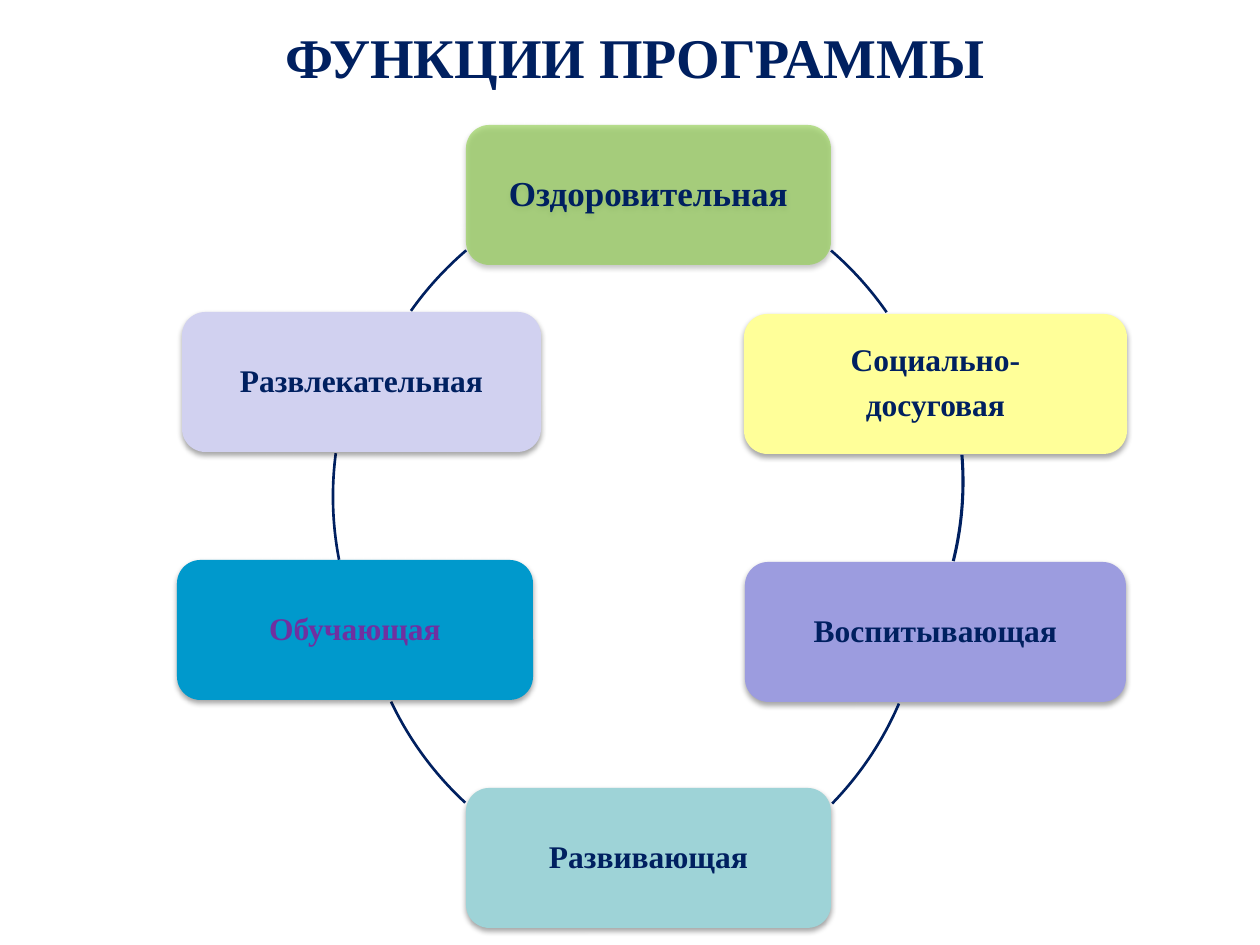
from lxml.etree import SubElement
from pptx import Presentation
from pptx.dml.color import RGBColor
from pptx.enum.shapes import MSO_SHAPE
from pptx.enum.text import MSO_ANCHOR, PP_ALIGN
from pptx.oxml.ns import qn
from pptx.util import Emu, Pt

SCALE = 914400 / 126
NAVY = RGBColor(0x00, 0x20, 0x60)
PURPLE = RGBColor(0x70, 0x30, 0xA0)
GREEN = RGBColor(0x92, 0xD0, 0x50)
YELLOW = RGBColor(0xFF, 0xFF, 0x99)
VIOLET = RGBColor(0x9C, 0x9C, 0xDF)
TEAL = RGBColor(0x9E, 0xD3, 0xD7)
BLUE = RGBColor(0x00, 0x99, 0xCC)
LILAC = RGBColor(0xD1, 0xD1, 0xF0)

TALL = 140
RING = 663
FONT = {"name": "Times New Roman", "bold": True}
BODY = {"alignment": PP_ALIGN.CENTER, "line_spacing": 0.9, "space_after": Pt(6)}

# left, top, width, fill, opacity, lines, text size, text colour
CARDS = [
    (466, 125, 365, GREEN, 63, ["Оздоровительная"], 20, NAVY),
    (744, 314, 383, YELLOW, 100, ["Социально-", "досуговая"], 18, NAVY),
    (745, 562, 381, VIOLET, 100, ["Воспитывающая"], 18, NAVY),
    (466, 788, 365, TEAL, 100, ["Развивающая"], 18, NAVY),
    (177, 560, 356, BLUE, 100, ["Обучающая"], 18, PURPLE),
    (182, 312, 359, LILAC, 100, ["Развлекательная"], 18, NAVY),
]
# left and top of the circle, start and end in degrees, line width
ARCS = [
    (283, 170, 310.8, 325.2, 1.5),
    (300, 150, 355.4, 13.9, 1.75),
    (263, 241, 23.3, 44.2, 1.5),
    (359, 228, 132.8, 154.6, 1.5),
    (333, 165, 169, 187.5, 1.5),
    (350, 171, 215.3, 229.5, 1.5),
]


def px(*nums):
    return [Emu(round(n * SCALE)) for n in nums]


def style(item, **vals):
    for key, val in vals.items():
        setattr(item, key, val)


def write(para, text, size, color):
    run = para.add_run()
    run.text = text
    style(run.font, size=Pt(size), **FONT)
    run.font.color.rgb = color


def fade(node, pct):
    SubElement(node, qn("a:alpha"), val=str(pct * 1000))


def shade(shape):
    """Add a soft shadow straight below the shape."""
    shape.shadow.inherit = False
    effects = shape._element.spPr.find(qn("a:effectLst"))
    outer = SubElement(effects, qn("a:outerShdw"), blurRad=str(Pt(3.1)),
                       dist=str(Pt(1.8)), dir="5400000", rotWithShape="0")
    fade(SubElement(outer, qn("a:srgbClr"), val="000000"), 35)


def add_title(slide, text):
    box = slide.shapes.add_textbox(*px(273, 16, 731, 81))
    box.text_frame.word_wrap = False
    write(box.text_frame.paragraphs[0], text, 32, NAVY)


def add_card(slide, left, top, wide, fill, alpha, lines, size, color):
    card = slide.shapes.add_shape(MSO_SHAPE.ROUNDED_RECTANGLE,
                                  *px(left, top, wide, TALL))
    card.fill.solid()
    card.fill.fore_color.rgb = fill
    if alpha < 100:
        fade(card._element.spPr.find(qn("a:solidFill"))[0], alpha)
    card.line.fill.background()
    shade(card)
    frame = card.text_frame
    style(frame, word_wrap=True, vertical_anchor=MSO_ANCHOR.MIDDLE)
    for i, text in enumerate(lines):
        para = frame.add_paragraph() if i else frame.paragraphs[0]
        style(para, **BODY)
        write(para, text, size, color)


def add_arc(slide, left, top, start, end, width):
    arc = slide.shapes.add_shape(MSO_SHAPE.ARC, *px(left, top, RING, RING))
    for i, angle in enumerate((start, end)):
        arc.adjustments[i] = angle * 0.6  # 60000 units a degree, over 100000
    arc.shadow.inherit = False
    arc.fill.background()
    arc.line.color.rgb = NAVY
    arc.line.width = Pt(width)


def main():
    prs = Presentation()
    style(prs, slide_width=px(1260)[0], slide_height=px(945)[0])
    slide = prs.slides.add_slide(prs.slide_layouts[6])
    add_title(slide, "ФУНКЦИИ ПРОГРАММЫ")
    for card, arc in zip(CARDS, ARCS):
        add_card(slide, *card)
        add_arc(slide, *arc)
    prs.save("out.pptx")


if __name__ == "__main__":
    main()
